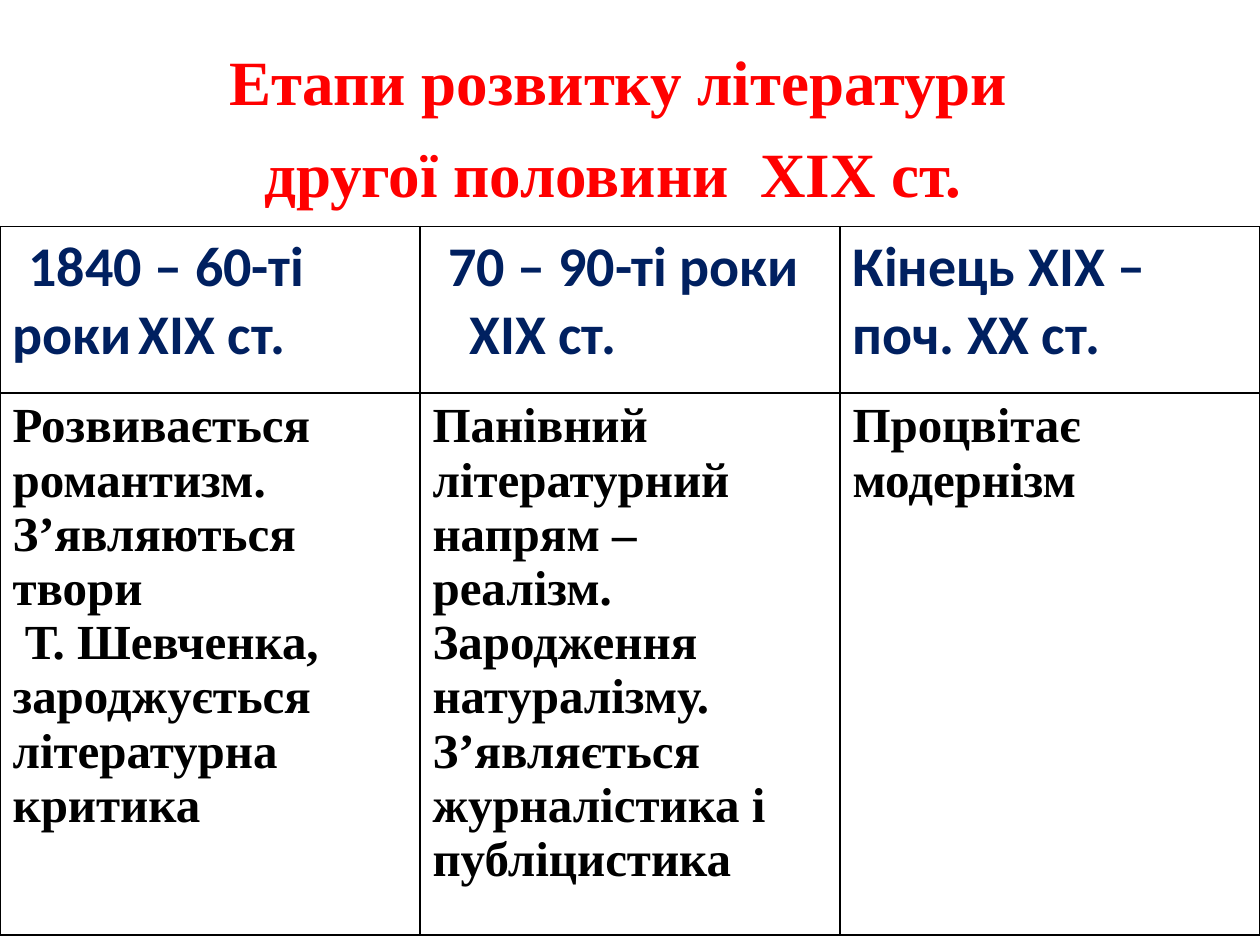
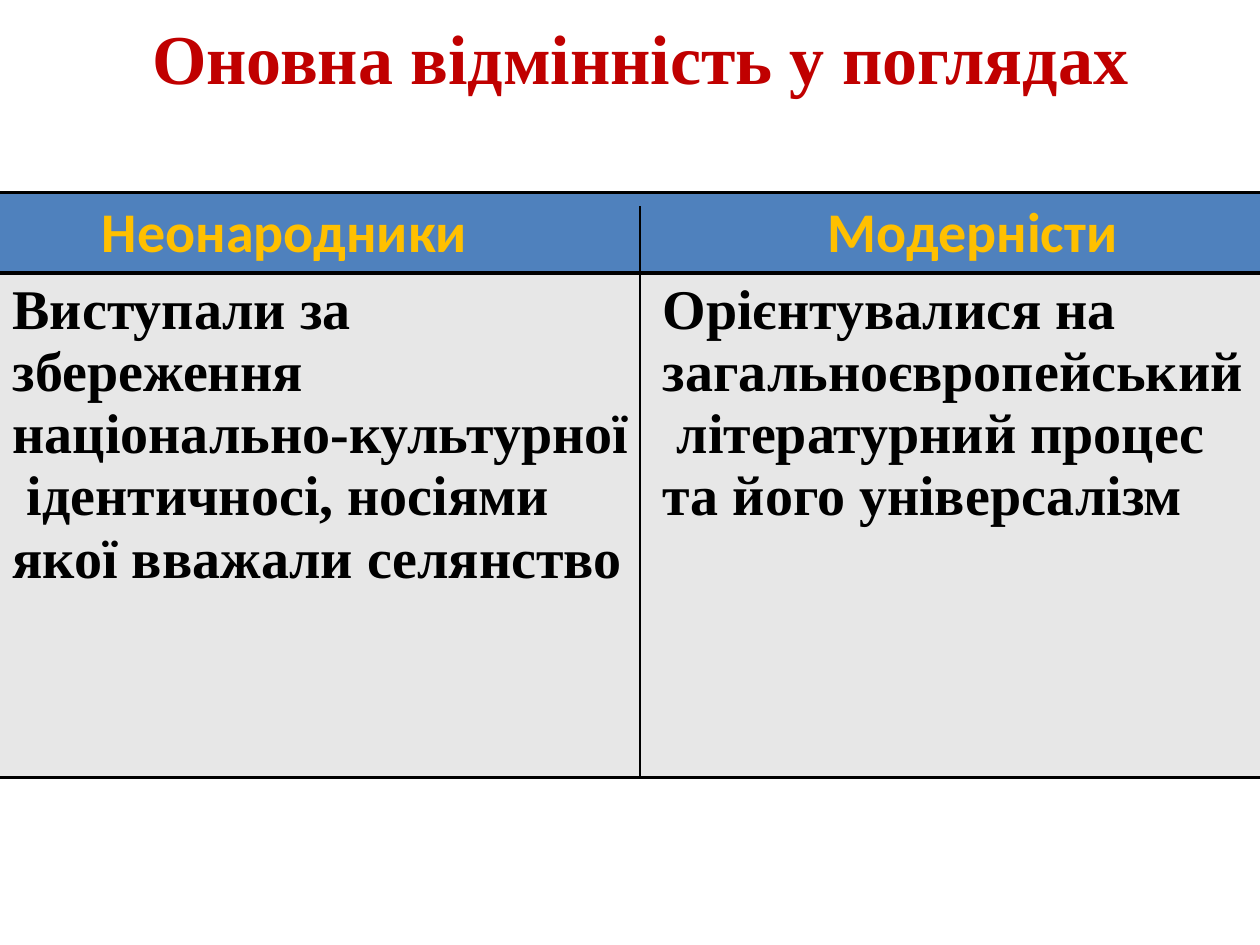
from lxml import etree
from pptx import Presentation
from pptx.dml.color import RGBColor
from pptx.enum.shapes import MSO_CONNECTOR
from pptx.oxml.ns import qn
from pptx.util import Pt

STRAIGHT = MSO_CONNECTOR.STRAIGHT
NO_STYLE = "{2D5ABB26-0587-4C30-8999-92F81FD0307C}"
COLORS = {
    "red": "FF0000", "dark_red": "C00000", "navy": "002060", "gold": "FFC000",
    "black": "000000", "blue": "4F81BD", "grey": "E7E7E7",
}
SERIF, SANS = "Times New Roman", "Calibri"
SLIDE_WIDTH, SLIDE_HEIGHT = 720, 540


def write_text(frame, paragraphs, color, font_format, space_before=0):
    """Each paragraph is (text, first-line indent, tab stop or None)."""
    frame.word_wrap = True
    for number, (text, indent, tab_stop) in enumerate(paragraphs):
        paragraph = frame.add_paragraph() if number else frame.paragraphs[0]
        properties = paragraph._p.get_or_add_pPr()
        properties.set("indent", str(Pt(indent)))
        if number and space_before:
            paragraph.space_before = Pt(space_before)
        if tab_stop:
            tabs = etree.SubElement(properties, qn("a:tabLst"))
            etree.SubElement(tabs, qn("a:tab"), pos=str(Pt(tab_stop)), algn="l")
        run = paragraph.add_run()
        run.text = text
        for name, value in font_format.items():
            setattr(run.font, name, value)
        run.font.color.rgb = RGBColor.from_string(COLORS[color])


def add_stage_table(slide, top, widths, heights, rows, row_styles, sides, border):
    """Each row style is (text colour, font format, fill colour or None)."""
    frame = slide.shapes.add_table(len(rows), len(widths), 0, Pt(top),
                                   Pt(sum(widths)), Pt(sum(heights)))
    table = frame.table
    table._tbl.tblPr.find(qn("a:tableStyleId")).text = NO_STYLE
    table.first_row = table.horz_banding = False
    for column, width in zip(table.columns, widths):
        column.width = Pt(width)
    for row, height in zip(table.rows, heights):
        row.height = Pt(height)
    for r, (row, (color, font_format, fill)) in enumerate(zip(rows, row_styles)):
        for c, paragraphs in enumerate(row):
            cell = table.cell(r, c)
            write_text(cell.text_frame, paragraphs, color, font_format)
            if fill:
                cell.fill.solid()
                cell.fill.fore_color.rgb = RGBColor.from_string(COLORS[fill])
            else:
                cell.fill.background()
            for place, side in enumerate(sides):
                line = etree.Element(qn(f"a:ln{side}"), w=str(Pt(border)))
                solid = etree.SubElement(line, qn("a:solidFill"))
                etree.SubElement(solid, qn("a:srgbClr"), val=COLORS["black"])
                cell._tc.get_or_add_tcPr().insert(place, line)


deck = Presentation()
deck.slide_width, deck.slide_height = Pt(SLIDE_WIDTH), Pt(SLIDE_HEIGHT)
blank = deck.slide_layouts[6]

# Shared text formats
title_font = {"name": SERIF, "size": Pt(36), "bold": True}
header_font = {"name": SANS, "size": Pt(32), "bold": True}
body_font = {"name": SERIF, "size": Pt(28), "bold": True}

# What each slide says
stages_title = [("Етапи розвитку літератури", 88, None),
                ("другої половини  ХІХ ст.", 108, None)]
stages = [
    [
        [("1840 – 60-ті роки\tХІХ ст.", 9, 111)],
        [("70 – 90-ті роки", 9, None), ("ХІХ ст.", 21, None)],
        [("Кінець ХІХ –", 0, None), ("поч. ХХ ст.", 0, None)],
    ],
    [
        [("Розвивається романтизм. З’являються твори", 0, None),
         ("Т. Шевченка, зароджується літературна критика", 7, None)],
        [("Панівний літературний напрям – реалізм. Зародження  натуралізму. "
          "З’являється журналістика і публіцистика", 0, None)],
        [("Процвітає модернізм", 0, None)],
    ],
]
views_title = [("Оновна відмінність у поглядах", 80, None)]
views = [
    [[("Неонародники", 51, None)], [("Модерністи", 94, None)]],
    [
        [("Виступали за збереження національно-культурної  ідентичносі, "
          "носіями якої вважали селянство", 0, None)],
        [("Орієнтувалися на  загальноєвропейський  літературний процес "
          "та його універсалізм", 0, None)],
    ],
]

# Titles
slides = []
for title, color, size, left, top, height in (
    (stages_title, "red", 36, 36, 21, 104),
    (views_title, "dark_red", 40, 0, 4.5, 60),
):
    slide = deck.slides.add_slide(blank)
    box = slide.shapes.add_textbox(Pt(left), Pt(top), Pt(SLIDE_WIDTH - left), Pt(height))
    write_text(box.text_frame, title, color, {**title_font, "size": Pt(size)}, space_before=9)
    slides.append(slide)
stages_slide, views_slide = slides

# Stages of literature: full grid
add_stage_table(
    stages_slide, 129.5, [SLIDE_WIDTH / 3] * 3, [95, 304], stages,
    [("navy", header_font, None), ("black", body_font, None)],
    sides="LRTB", border=1)

# Differing views: horizontal rules only
add_stage_table(
    views_slide, 110, [371.5, 348.5], [46, 288.5], views,
    [("gold", header_font, "blue"), ("black", {**body_font, "size": Pt(32)}, "grey")],
    sides="TB", border=2)

# Divider between the two views
divider = views_slide.shapes.add_connector(STRAIGHT, Pt(365.75), Pt(118), Pt(365.75), Pt(444.5))
divider.line.width = Pt(0.75)
divider.line.color.rgb = RGBColor.from_string(COLORS["black"])
etree.SubElement(divider._element.spPr, qn("a:effectLst"))

deck.save("out.pptx")
